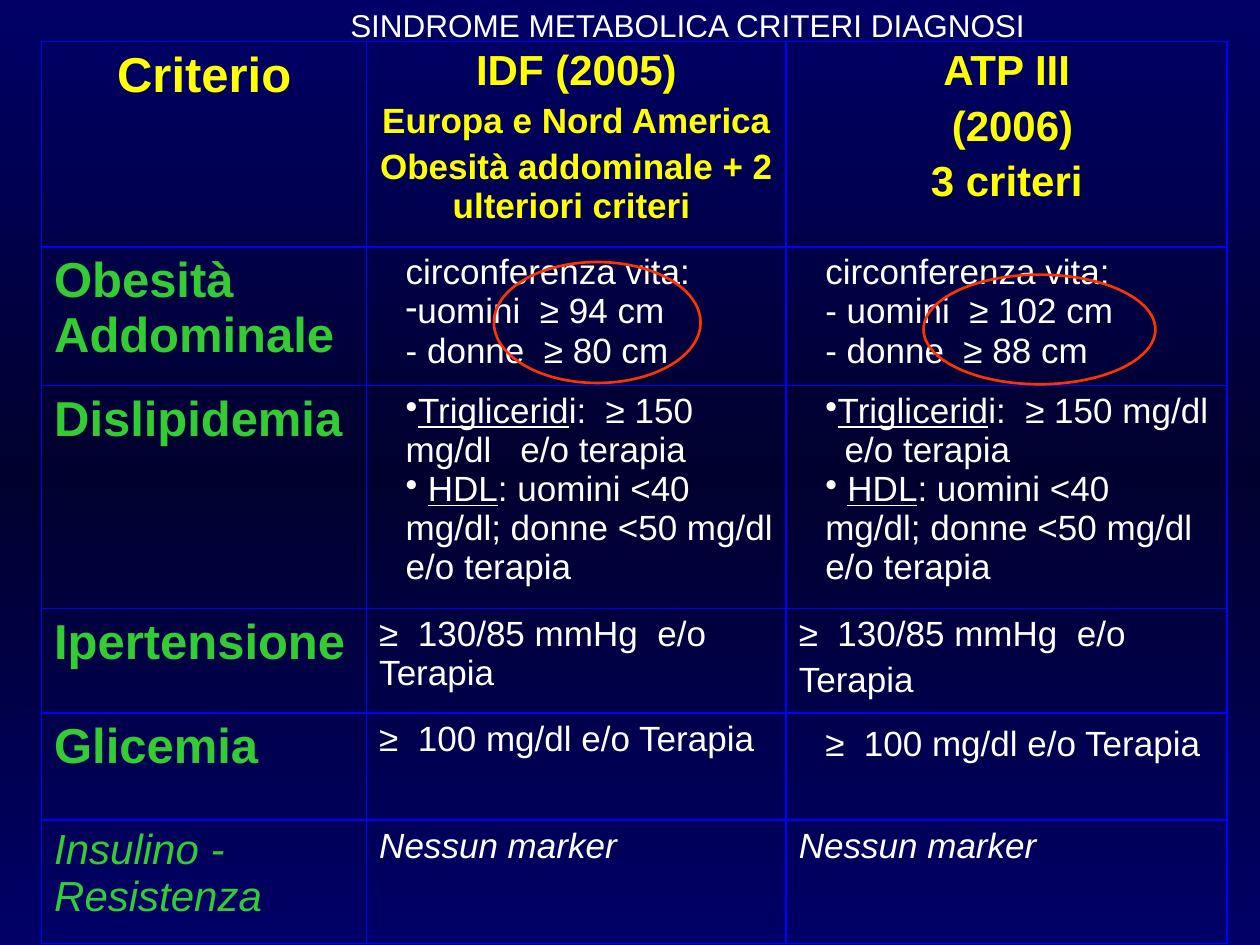
from copy import deepcopy

from lxml.etree import SubElement
from pptx import Presentation
from pptx.dml.color import RGBColor
from pptx.enum.shapes import MSO_SHAPE as Shape
from pptx.enum.text import MSO_ANCHOR as Anchor, PP_ALIGN as Align
from pptx.oxml.ns import qn
from pptx.util import Inches, Pt

YELLOW, GREEN, WHITE = "FFFF00", "33CC33", "FFFFFF"
BLUE, RED = "0000FF", "FF3300"


def color(value):
    return RGBColor.from_string(value)


def write(paragraph, text, size=20, fill=WHITE, bold=False, italic=False,
          align=Align.LEFT, before=0.2, margin=0, bullet=None, tail=None):
    """Text between underscores is underlined; tail is the font of a raised last space."""
    paragraph.alignment = align
    paragraph.space_before = Pt(size * before)
    properties = paragraph._p.get_or_add_pPr()
    properties.set("marL", str(Inches(margin)))
    properties.set("indent", "0")
    if bullet:
        SubElement(properties, qn("a:buChar")).set("char", bullet)
    else:
        SubElement(properties, qn("a:buNone"))

    def add_run(part, font_name="Arial", points=size):
        run = paragraph.add_run()
        run.text = part
        font = run.font
        font.name, font.size = font_name, Pt(points)
        font.bold, font.italic = bold, italic
        font.color.rgb = color(fill)
        return run

    for index, part in enumerate(text.split("_")):
        if part:
            add_run(part).font.underline = index % 2 == 1
    if tail:
        add_run(" ", tail, 24)._r.get_or_add_rPr().set("baseline", "30000")


class SlideBuilder:
    def __init__(self, presentation):
        self.slide = presentation.slides.add_slide(presentation.slide_layouts[5])

    def background(self, *values):
        fill = self.slide.background.fill
        fill.gradient()
        fill.gradient_angle = 270
        stops = self.slide._element.find(".//" + qn("a:gsLst"))
        stops.insert(1, deepcopy(stops[0]))
        for index, (stop, value) in enumerate(zip(fill.gradient_stops, values)):
            stop.position = index / (len(values) - 1)
            stop.color.rgb = color(value)

    def title(self, text, left, top, width, height):
        title = self.slide.shapes.title
        title.left, title.top = Inches(left), Inches(top)
        title.width, title.height = Inches(width), Inches(height)
        frame = title.text_frame
        frame.word_wrap = False
        frame.vertical_anchor = Anchor.TOP
        write(frame.paragraphs[0], text, size=18, before=0)

    def table(self, left, top, columns, rows, contents):
        table = self.slide.shapes.add_table(
            len(rows), len(columns), Inches(left), Inches(top),
            Inches(sum(columns)), Inches(sum(rows))).table
        table.first_row = table.horz_banding = False
        for column, width in zip(table.columns, columns):
            column.width = Inches(width)
        for row, height, cells in zip(table.rows, rows, contents):
            row.height = Inches(height)
            for cell, paragraphs in zip(row.cells, cells):
                self.cell(cell, paragraphs)

    def cell(self, cell, paragraphs):
        frame = cell.text_frame
        for index, (text, style) in enumerate(paragraphs):
            paragraph = frame.add_paragraph() if index else frame.paragraphs[0]
            write(paragraph, text, **style)
        properties = cell._tc.get_or_add_tcPr()
        for side in ("a:lnL", "a:lnR", "a:lnT", "a:lnB"):
            line = SubElement(properties, qn(side), w=str(Pt(1)))
            solid = SubElement(line, qn("a:solidFill"))
            SubElement(solid, qn("a:srgbClr"), val=BLUE)
        cell.fill.background()

    def ellipse(self, left, top, width, height):
        shape = self.slide.shapes.add_shape(
            Shape.OVAL, Inches(left), Inches(top), Inches(width), Inches(height))
        shape.shadow.inherit = False
        shape.fill.background()
        shape.line.color.rgb = color(RED)
        shape.line.width = Pt(1.5)


# Paragraph styles
def heading(text, size):
    return text, dict(size=size, fill=YELLOW, bold=True, align=Align.CENTER)


def criterion(text):
    return [(text, dict(size=28, fill=GREEN, bold=True))]


def indented(text, **style):
    return text, dict(margin=0.21, before=0, **style)


def lipids():
    return [indented("_Triglicerid_i:  ≥ 150 mg/dl   e/o terapia", bullet="•"),
            indented(" _HDL_: uomini <40 mg/dl; donne <50 mg/dl e/o terapia", bullet="•")]


def main():
    presentation = Presentation()
    presentation.slide_width, presentation.slide_height = Inches(10), Inches(7.5)
    builder = SlideBuilder(presentation)
    builder.background("000066", "00002F", "000066")
    builder.title("SINDROME METABOLICA CRITERI DIAGNOSI", 2.68, 0, 5.61, 0.4)

    # Diagnostic criteria
    pressure = "≥  130/85 mmHg  e/o Terapia"
    glucose = "≥  100 mg/dl e/o Terapia"
    no_marker = [("Nessun marker", dict(italic=True))]
    contents = [
        [[heading("Criterio", 28)],
         [heading("IDF (2005)", 24), heading("Europa e Nord America", 20),
          heading("Obesità addominale + 2 ulteriori criteri ", 20)],
         [heading("ATP III", 24), heading(" (2006)", 24), heading("3 criteri", 24)]],
        [criterion("Obesità Addominale"),
         [indented("circonferenza vita:"), indented("uomini  ≥ 94 cm", bullet="-"),
          indented("- donne  ≥ 80 cm")],
         [indented("circonferenza vita:"), indented("- uomini  ≥ 102 cm"),
          indented("- donne  ≥ 88 cm")]],
        [criterion("Dislipidemia"), lipids(), lipids()],
        [criterion("Ipertensione"), [(pressure, {})], [(pressure, dict(tail="Roboto"))]],
        [criterion("Glicemia"), [(glucose, {})],
         [indented(glucose, tail="Times New Roman")]],
        [[("Insulino - Resistenza", dict(size=24, fill=GREEN, italic=True))],
         no_marker, no_marker],
    ]
    builder.table(0.33, 0.33, [2.58, 3.33, 3.5],
                  [1.63, 1.1, 1.77, 0.83, 0.85, 0.98], contents)

    # Rings around the waist thresholds
    builder.ellipse(3.92, 2.08, 1.64, 0.96)
    builder.ellipse(7.33, 2.18, 1.84, 0.87)
    presentation.save("out.pptx")


if __name__ == "__main__":
    main()
